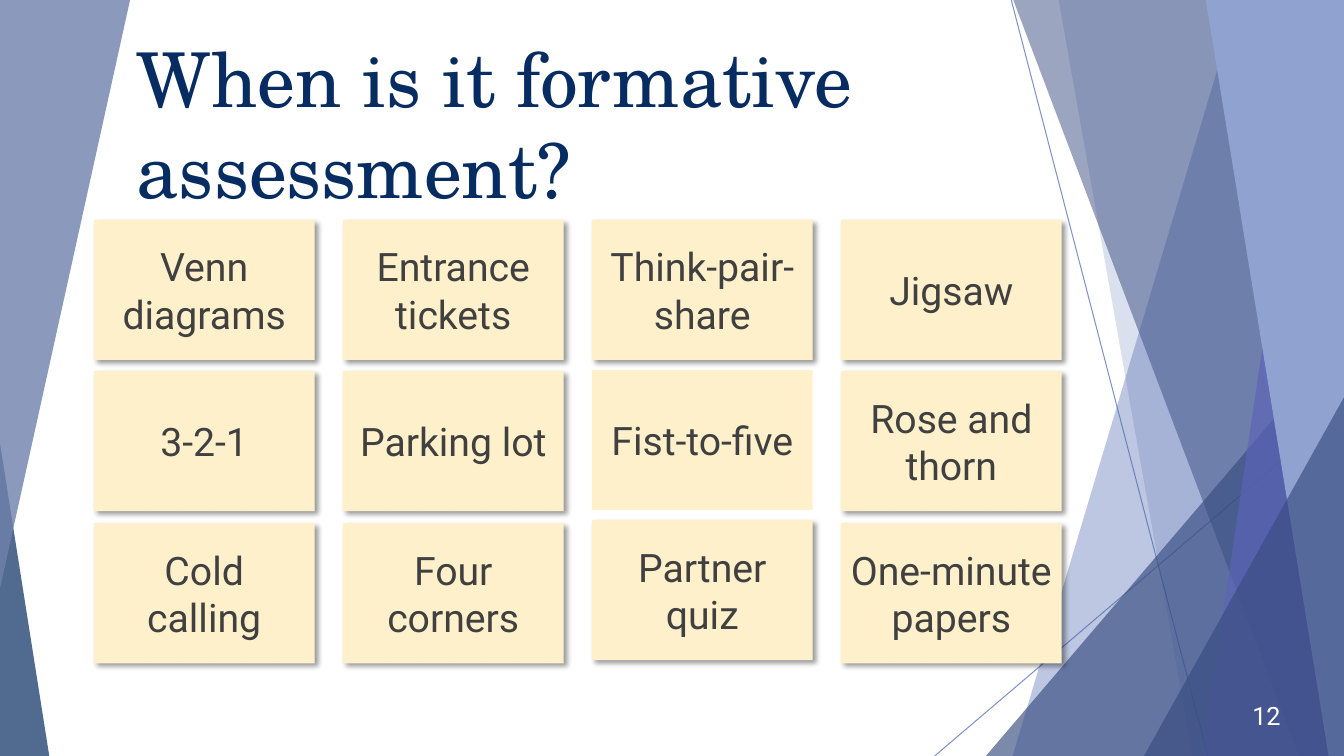
from dataclasses import dataclass

from lxml import etree
from pptx import Presentation
from pptx.dml.color import RGBColor
from pptx.enum.shapes import MSO_CONNECTOR, MSO_SHAPE
from pptx.enum.text import MSO_ANCHOR as Anchor, PP_ALIGN as Align
from pptx.oxml.ns import qn
from pptx.util import Inches, Pt

NAVY, BLUE, DEEP_BLUE = "072C62", "4A66AC", "384C81"
CREAM, CHARCOAL, WHITE = "FEF0CA", "404040", "FFFFFF"
RIGHT, BOTTOM = 13.33, 7.51
CARD_WIDTH, CARD_HEIGHT = 2.19, 1.39
CARD_LEFT, CARD_STEP = 0.93, 2.47


@dataclass
class Ray:
    start: tuple[float, float]
    end: tuple[float, float]


@dataclass
class Band:
    """Area from a slanted left edge to the right side of the slide."""
    top_x: float
    bottom_x: float
    color: str
    alpha: int = 100


@dataclass
class Wedge:
    left: float
    top: float
    width: float
    height: float
    apex: int
    color: str
    alpha: int
    flipped: bool = False


@dataclass
class Card:
    text: str
    top: float
    shadow: bool = True


RAYS = [Ray((10.03, 0), (11.98, 7.5)), Ray((13.33, 4.04), (9.27, 7.5))]
FACETS = [
    Band(12.28, 10.04, BLUE, 36),
    Band(10.5, 11.83, BLUE, 20),
    Wedge(9.77, 3.34, 3.56, 4.17, 1, DEEP_BLUE, 66),
    Band(10.05, 12.89, DEEP_BLUE, 50),
    Band(13.03, 11.92, "5C64B7", 70),
    Band(11.96, 13.18, "90A2CF"),
    Wedge(11.34, 3.94, 1.99, 3.57, 1, DEEP_BLUE, 66),
    Wedge(0, 4.4, 0.49, 3.11, 0, NAVY, 70),
    Wedge(0, 0, 1.29, 5.84, 0, "6F81AC", 80, flipped=True),
]
CARD_ROWS = [
    [Card("Venn diagrams", 2.18), Card("Entrance tickets", 2.18),
     Card("Think-pair-share", 2.18), Card("Jigsaw", 2.18)],
    [Card("3-2-1", 3.68), Card("Parking lot", 3.68),
     Card("Fist-to-five", 3.67, shadow=False), Card("Rose and thorn", 3.68)],
    [Card("Cold calling", 5.19), Card("Four corners", 5.19),
     Card("Partner quiz", 5.16), Card("One-minute papers", 5.19)],
]
TITLE_FORMAT = {"name": "TeX Gyre Schola", "size": Pt(54)}
CARD_FORMAT = {"name": "Roboto", "size": Pt(28)}
NUMBER_FORMAT = {"name": "Roboto", "size": Pt(18)}


def rgb(color: str) -> RGBColor:
    return RGBColor.from_string(color)


def set_alpha(parent, percent: int) -> None:
    """Make the colour inside a fill or line element translucent."""
    if percent < 100:
        color = next(parent.iter(qn("a:srgbClr")))
        etree.SubElement(color, qn("a:alpha")).set("val", str(percent * 1000))


def paint(shape, color: str, alpha: int = 100) -> None:
    shape.shadow.inherit = False
    shape.line.fill.background()
    shape.fill.solid()
    shape.fill.fore_color.rgb = rgb(color)
    set_alpha(shape.element.spPr.find(qn("a:solidFill")), alpha)


def add_ray(page, ray: Ray) -> None:
    points = [Inches(value) for value in (*ray.start, *ray.end)]
    line = page.shapes.add_connector(MSO_CONNECTOR.STRAIGHT, *points)
    line.line.width = Pt(0.75)
    line.line.color.rgb = rgb(BLUE)
    properties = line.element.spPr
    set_alpha(properties.find(qn("a:ln")), 70)
    etree.SubElement(properties, qn("a:effectLst"))


def add_band(page, band: Band) -> None:
    builder = page.shapes.build_freeform(Inches(band.top_x), 0)
    corners = [(RIGHT, 0), (RIGHT, BOTTOM), (band.bottom_x, BOTTOM)]
    builder.add_line_segments([(Inches(x), Inches(y)) for x, y in corners])
    paint(builder.convert_to_shape(), band.color, band.alpha)


def add_wedge(page, wedge: Wedge) -> None:
    box = (wedge.left, wedge.top, wedge.width, wedge.height)
    shape = page.shapes.add_shape(
        MSO_SHAPE.ISOSCELES_TRIANGLE, *[Inches(value) for value in box])
    shape.adjustments[0] = wedge.apex
    if wedge.flipped:
        shape.element.spPr.find(qn("a:xfrm")).set("flipV", "1")
    paint(shape, wedge.color, wedge.alpha)


def write(shape, text: str, formats: dict, color: str,
          align: Align, anchor: Anchor):
    frame = shape.text_frame
    frame.word_wrap = True
    frame.vertical_anchor = anchor
    para = frame.paragraphs[0]
    para.alignment = align
    span = para.add_run()
    span.text = text
    for name, value in formats.items():
        setattr(span.font, name, value)
    span.font.color.rgb = rgb(color)
    return para


def add_text(page, box: tuple[float, ...], *content) -> None:
    shape = page.shapes.add_textbox(*[Inches(value) for value in box])
    write(shape, *content)


def add_drop_shadow(shape) -> None:
    effects = shape.element.spPr.find(qn("a:effectLst"))
    shadow = etree.SubElement(effects, qn("a:outerShdw"))
    settings = {"blurRad": Pt(4), "dist": Pt(3), "dir": 45 * 60000,
                "algn": "tl", "rotWithShape": 0}
    for name, value in settings.items():
        shadow.set(name, str(value))
    etree.SubElement(shadow, qn("a:srgbClr")).set("val", "000000")
    set_alpha(shadow, 40)


def add_card(page, card: Card, column: int) -> None:
    box = (CARD_LEFT + column * CARD_STEP, card.top, CARD_WIDTH, CARD_HEIGHT)
    shape = page.shapes.add_shape(
        MSO_SHAPE.RECTANGLE, *[Inches(value) for value in box])
    paint(shape, CREAM)
    if card.shadow:
        add_drop_shadow(shape)
    para = write(shape, card.text, CARD_FORMAT, CHARCOAL,
                 Align.CENTER, Anchor.MIDDLE)
    para.space_before = Pt(10)


def main() -> None:
    deck = Presentation()
    deck.slide_width, deck.slide_height = Inches(RIGHT), Inches(7.5)
    page = deck.slides.add_slide(deck.slide_layouts[6])
    for ray in RAYS:
        add_ray(page, ray)
    for facet in FACETS:
        if isinstance(facet, Band):
            add_band(page, facet)
        else:
            add_wedge(page, facet)
    add_text(page, (1.26, 0.27, 10.25, 1.44), "When is it formative assessment?",
             TITLE_FORMAT, NAVY, Align.LEFT, Anchor.TOP)
    for row in CARD_ROWS:
        for column, card in enumerate(row):
            add_card(page, card, column)
    add_text(page, (12.05, 6.9, 0.75, 0.4), "12",
             NUMBER_FORMAT, WHITE, Align.RIGHT, Anchor.MIDDLE)
    deck.save("out.pptx")


if __name__ == "__main__":
    main()
